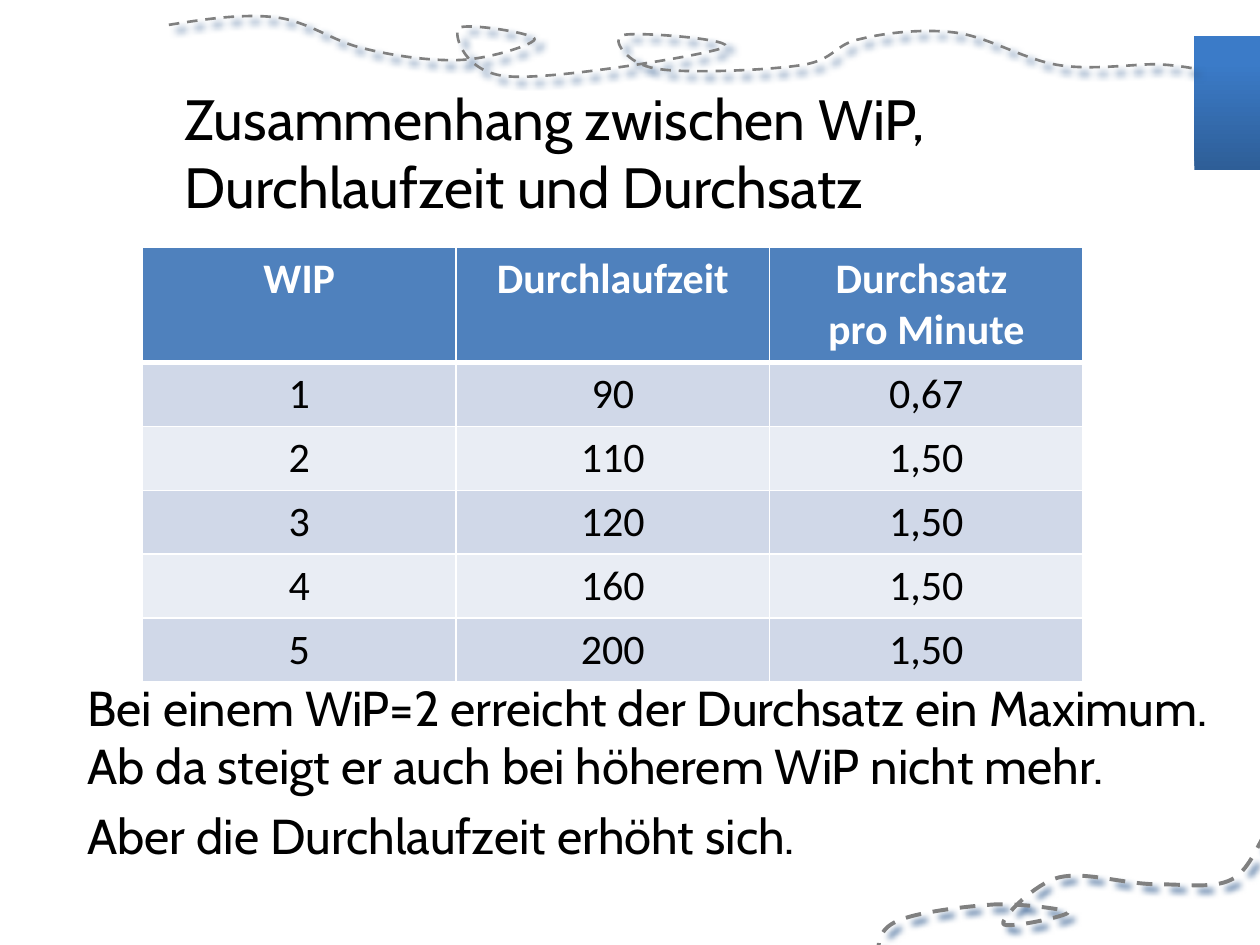
from dataclasses import dataclass

from lxml import etree
from pptx import Presentation
from pptx.dml.color import RGBColor
from pptx.enum.dml import MSO_LINE_DASH_STYLE as Dash
from pptx.enum.shapes import MSO_SHAPE as Shape
from pptx.enum.text import MSO_ANCHOR as Anchor, PP_ALIGN as Align
from pptx.oxml import parse_xml
from pptx.oxml.ns import nsdecls, qn
from pptx.util import Pt


@dataclass(frozen=True)
class Theme:
    text: str = "000000"
    white: str = "FFFFFF"
    header: str = "4F81BD"
    bands: tuple = ("D0D8E8", "E9EDF4")
    thread: str = "808080"
    thread_shadow: str = "376092"
    tab_bottom: str = "2E5E97"
    tab_top: str = "3B7BC8"
    text_font: str = "Cabin"
    table_font: str = "Calibri"
    title_size: float = 32.4
    body_size: float = 28
    table_size: float = 24


THEME = Theme()

TOP_THREAD = [
    (0, 5),
    (22, 1.5), (42.5, -1.5), (61, 0.7),
    (80, 3), (93.5, 14.5), (111.5, 18.5),
    (129.5, 23), (152, 26), (168, 25),
    (184.5, 24), (209.5, 16), (209, 13),
    (208, 9.5), (168, 3.5), (165.5, 7),
    (162.5, 11), (169, 33), (194.5, 34.5),
    (219.5, 36.5), (306, 22.5), (317, 18),
    (327.5, 13.5), (265.5, 8.5), (259, 11),
    (252.5, 13), (261.5, 27.5), (278.5, 30),
    (295, 33), (342, 31), (361.5, 28),
    (381, 25), (380, 16), (395.5, 13),
    (409.5, 9.5), (431.5, 7), (450, 9.5),
    (468.5, 12), (489, 25), (508.5, 28),
    (527, 31), (551, 27.5), (564, 27.5),
    (576.5, 28), (586, 30), (586, 30),
]
BOTTOM_THREAD = [
    (0, 74),
    (0, 66), (-0.5, 57.5), (11, 52.5),
    (21.5, 47.5), (50.5, 44), (67, 43),
    (83, 42.5), (108, 46), (108.5, 47.5),
    (109.5, 49.5), (72, 57.5), (71.5, 54),
    (70.5, 50.5), (89.5, 31), (103.5, 27.5),
    (119, 24), (140.5, 31.5), (160, 31.5),
    (176.5, 31.5), (191, 34), (201.5, 29),
    (211.5, 24.5), (217.5, 8), (221, 3),
    (224.5, -1.5), (222.5, 1.5), (222.5, 1.5),
]
ROWS = [
    ("WIP", "Durchlaufzeit", "Durchsatz \vpro Minute"),
    ("1", "90", "0,67"),
    ("2", "110", "1,50"),
    ("3", "120", "1,50"),
    ("4", "160", "1,50"),
    ("5", "200", "1,50"),
]


def color(value):
    return RGBColor.from_string(value)


def set_font(font, name, size, value, bold=False):
    font.name, font.size, font.bold = name, Pt(size), bold
    font.color.rgb = color(value)


def set_curve(shape, controls):
    outline = shape._element.spPr.find(".//" + qn("a:path"))
    for command in list(outline):
        outline.remove(command)
    groups = [("a:moveTo", controls[:1])]
    groups += [("a:cubicBezTo", controls[i:i + 3]) for i in range(1, len(controls), 3)]
    for tag, points in groups:
        command = etree.SubElement(outline, qn(tag))
        for x, y in points:
            etree.SubElement(command, qn("a:pt"), x=str(Pt(x)), y=str(Pt(y)))


def add_thread(slide, left, top, width, height, controls, weight):
    builder = slide.shapes.build_freeform(Pt(left), Pt(top), scale=1.0)
    builder.add_line_segments([(Pt(left + width), Pt(top + height))], close=False)
    shape = builder.convert_to_shape()
    set_curve(shape, controls)
    shape.fill.background()
    shape.line.color.rgb = color(THEME.thread)
    shape.line.width = Pt(weight)
    shape.line.dash_style = Dash.DASH
    shape._element.spPr.append(parse_xml(
        f'<a:effectLst {nsdecls("a")}><a:outerShdw blurRad="{Pt(4)}" dist="{Pt(5)}" '
        f'dir="{40 * 60000}" algn="tl" rotWithShape="0">'
        f'<a:srgbClr val="{THEME.thread_shadow}"/></a:outerShdw></a:effectLst>'))


def add_tab(slide, left, top, width, height):
    shape = slide.shapes.add_shape(Shape.RECTANGLE, Pt(left), Pt(top), Pt(width), Pt(height))
    shape.shadow.inherit = False
    shape.line.fill.background()
    shape.fill.gradient()
    shape.fill.gradient_angle = 90
    stops = shape.fill.gradient_stops
    for stop, value, position in zip(stops, (THEME.tab_bottom, THEME.tab_top), (0, 0.8)):
        stop.color.rgb = color(value)
        stop.position = position


def add_text(slide, left, top, width, height, lines, size, anchor=Anchor.TOP):
    box = slide.shapes.add_textbox(Pt(left), Pt(top), Pt(width), Pt(height))
    frame = box.text_frame
    frame.word_wrap = True
    frame.vertical_anchor = anchor
    frame.margin_left = frame.margin_right = Pt(3.6)
    frame.margin_top = frame.margin_bottom = Pt(3.6)
    frame.text = "\n".join(lines)
    for index, paragraph in enumerate(frame.paragraphs):
        if index:
            paragraph.space_before = Pt(6)
        set_font(paragraph.font, THEME.text_font, size, THEME.text)


def set_borders(cell, top, bottom):
    properties = cell._tc.get_or_add_tcPr()
    sides = (("lnL", 1), ("lnR", 1), ("lnT", top), ("lnB", bottom))
    for index, (side, width) in enumerate(sides):
        line = etree.Element(qn(f"a:{side}"), w=str(Pt(width)))
        fill = etree.SubElement(line, qn("a:solidFill"))
        etree.SubElement(fill, qn("a:srgbClr"), val=THEME.white)
        properties.insert(index, line)


def add_results(slide, left, top, width, header_height, row_height):
    height = header_height + row_height * (len(ROWS) - 1)
    table = slide.shapes.add_table(
        len(ROWS), len(ROWS[0]), Pt(left), Pt(top), Pt(width), Pt(height)).table
    for column in table.columns:
        column.width = Pt(width / len(ROWS[0]))
    for row_index, values in enumerate(ROWS):
        header = row_index == 0
        table.rows[row_index].height = Pt(header_height if header else row_height)
        for column_index, value in enumerate(values):
            cell = table.cell(row_index, column_index)
            cell.text = value
            cell.fill.solid()
            cell.fill.fore_color.rgb = color(
                THEME.header if header else THEME.bands[(row_index - 1) % 2])
            set_borders(cell, 3 if row_index == 1 else 1, 3 if header else 1)
            paragraph = cell.text_frame.paragraphs[0]
            paragraph.alignment = Align.CENTER
            set_font(paragraph.font, THEME.table_font, THEME.table_size,
                     THEME.white if header else THEME.text, header)


def main():
    presentation = Presentation()
    presentation.slide_width, presentation.slide_height = Pt(720), Pt(540)
    slide = presentation.slides.add_slide(presentation.slide_layouts[6])
    add_tab(slide, 682.5, 20.6, 37.5, 76.6)
    add_thread(slide, 96.5, 9.2, 586, 35.3, TOP_THREAD, 1.5)
    add_thread(slide, 501.8, 473.8, 223, 73.5, BOTTOM_THREAD, 2.25)
    add_text(slide, 101.9, 61.2, 575.3, 51.1,
             ["Zusammenhang zwischen WiP, Durchlaufzeit und Durchsatz"],
             THEME.title_size, Anchor.MIDDLE)
    add_text(slide, 46.5, 383.4, 648, 115.2,
             ["Bei einem WiP=2 erreicht der Durchsatz ein Maximum. "
              "Ab da steigt er auch bei höherem WiP nicht mehr.",
              "Aber die Durchlaufzeit erhöht sich."], THEME.body_size)
    add_results(slide, 81.4, 141.1, 537.6, 66.1, 36.5)
    presentation.save("out.pptx")


if __name__ == "__main__":
    main()
